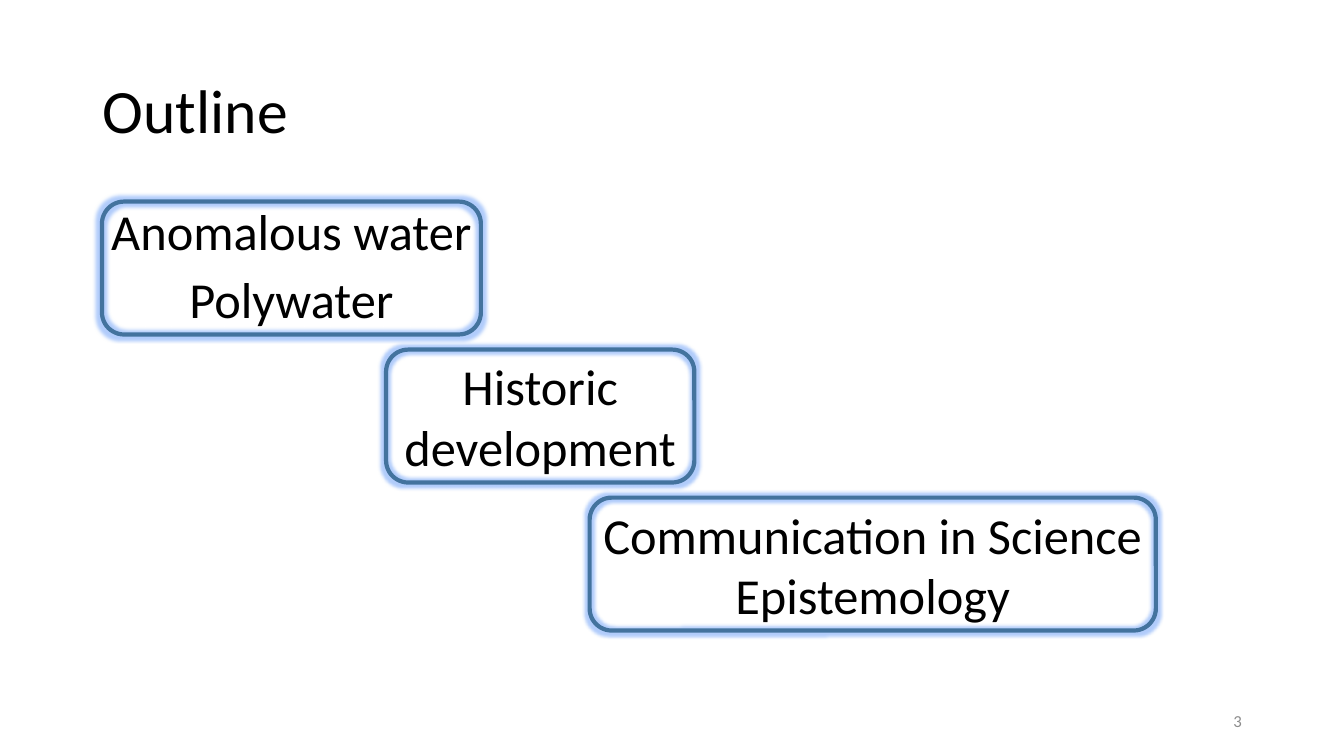
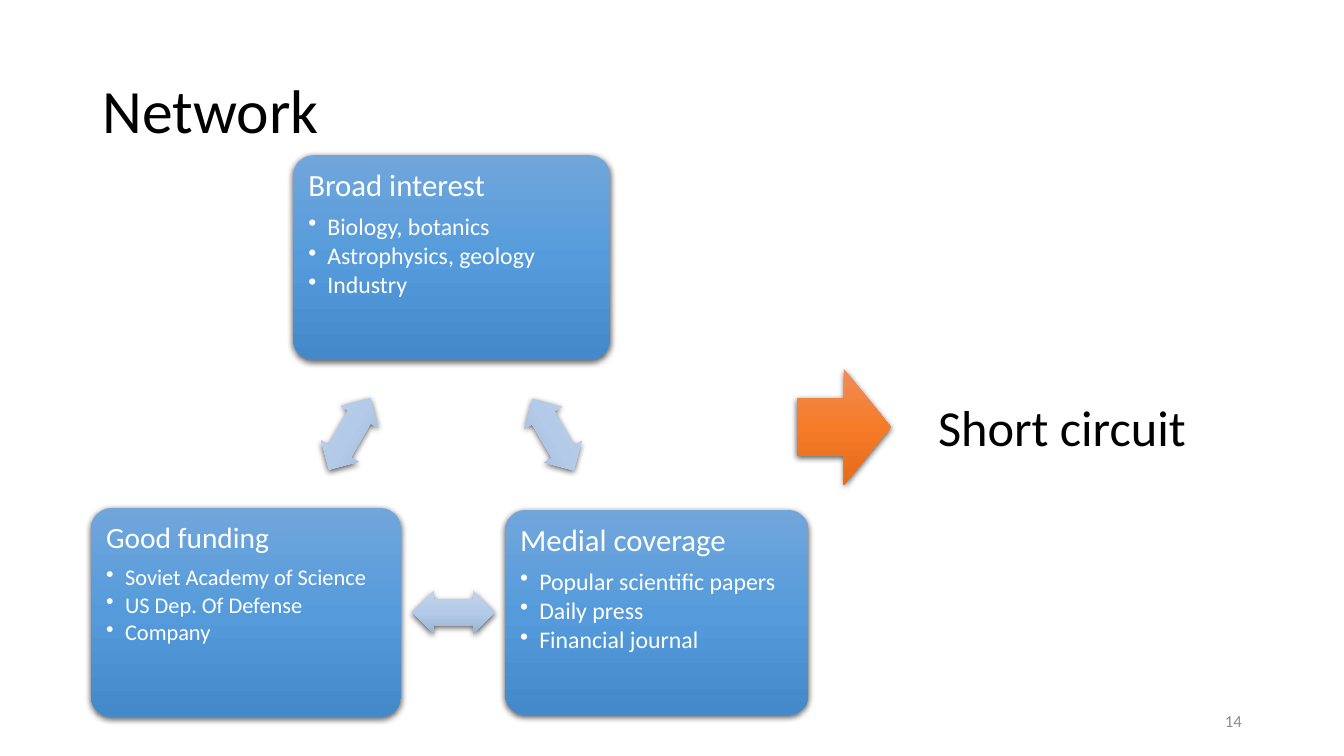
"""Build the outline and network slides of the polywater talk."""
from copy import deepcopy
from dataclasses import dataclass

from lxml import etree
from pptx import Presentation
from pptx.dml.color import RGBColor
from pptx.enum.shapes import MSO_SHAPE
from pptx.enum.text import MSO_ANCHOR, PP_ALIGN
from pptx.oxml.ns import qn
from pptx.util import Cm, Pt

ROUNDED = MSO_SHAPE.ROUNDED_RECTANGLE
DOUBLE_ARROW = MSO_SHAPE.LEFT_RIGHT_ARROW
RIGHT_ARROW = MSO_SHAPE.RIGHT_ARROW
LEFT, CENTER, RIGHT = PP_ALIGN.LEFT, PP_ALIGN.CENTER, PP_ALIGN.RIGHT
TOP, MIDDLE = MSO_ANCHOR.TOP, MSO_ANCHOR.MIDDLE

FONT = "Calibri"
BLACK, WHITE, GREY = "000000", "FFFFFF", "8C8C8C"
FRAME, GLOW = "43739E", "3C80F5"
BLUES = ("71A6DB", "559BDB", "448ACA")
PALE_BLUES = ("C0D2EB", "B3CBE9", "9BB4D3")
ORANGES = ("F18C57", "F67B28", "E56C19")
STEP_TOP, STEP_PITCH, STEP_HEIGHT = 5.08, 3.73, 3.35
ARROW_WIDTH, ARROW_HEIGHT = 2.08, 1.09


@dataclass(frozen=True)
class Area:
    """A rectangle in centimetres."""
    left: float
    top: float
    width: float
    height: float

    def lengths(self) -> tuple:
        return Cm(self.left), Cm(self.top), Cm(self.width), Cm(self.height)


@dataclass(frozen=True)
class Step:
    """A framed entry of the outline staircase."""
    left: float
    width: float
    lines: tuple
    spacing: float = 1.0
    gap: float = 0


@dataclass(frozen=True)
class Card:
    """A network card with a heading and bullets."""
    area: Area
    heading: str
    bullets: tuple
    heading_size: int = 22
    bullet_size: int = 17


@dataclass(frozen=True)
class Link:
    """A double arrow between two cards."""
    left: float
    top: float
    rotation: float


STEPS = (
    Step(2.57, 9.55, ("Anomalous water", "Polywater"), 0.9, 10),
    Step(9.73, 7.77, ("Historic development",)),
    Step(14.86, 14.27, ("Communication in Science", "Epistemology")),
)
CARDS = (
    Card(Area(7.39, 3.91, 7.98, 5.16), "Broad interest",
         ("Biology, botanics", "Astrophysics, geology", "Industry")),
    Card(Area(12.73, 12.85, 7.65, 5.16), "Medial coverage",
         ("Popular scientific papers", "Daily press", "Financial journal")),
    Card(Area(2.29, 12.8, 7.82, 5.26), "Good funding",
         ("Soviet Academy of Science", "US Dep. Of Defense", "Company"), 21, 16),
)
LINKS = (Link(12.9, 10.41, 60), Link(10.39, 14.88, 0), Link(7.77, 10.39, 300))


def colour(value: str) -> RGBColor:
    """Turn a hex string into a colour."""
    return RGBColor.from_string(value)


def format_text(para, size: float, ink: str, align=LEFT, spacing: float = 1.0) -> None:
    """Format a paragraph and its runs."""
    para.alignment = align
    para.line_spacing = spacing
    for span in para.runs:
        span.font.name = FONT
        span.font.size = Pt(size)
        span.font.color.rgb = colour(ink)


def add_label(page, area: Area, text: str, size: float, ink: str = BLACK,
              align=LEFT, anchor=MIDDLE, spacing: float = 1.0, wrap: bool = True) -> None:
    """Add a one-paragraph text box."""
    frame = page.shapes.add_textbox(*area.lengths()).text_frame
    frame.word_wrap = wrap
    frame.vertical_anchor = anchor
    frame.text = text
    format_text(frame.paragraphs[0], size, ink, align, spacing)


def add_effect(shape, tag: str, ink: str, alpha: int, **settings: str) -> None:
    """Give a shape a single glow or shadow."""
    shape.shadow.inherit = False
    effects = shape.element.spPr.find(qn("a:effectLst"))
    effect = etree.SubElement(effects, qn(tag), settings)
    shade = etree.SubElement(effect, qn("a:srgbClr"), val=ink)
    etree.SubElement(shade, qn("a:alpha"), val=str(alpha * 1000))


def add_gradient_shape(page, kind, area: Area, colours: tuple):
    """Add a borderless shape with a vertical gradient and a soft shadow."""
    shape = page.shapes.add_shape(kind, *area.lengths())
    shape.line.fill.background()
    shape.fill.gradient()
    shape.fill.gradient_angle = 270
    stops = shape.element.spPr.find(".//" + qn("a:gsLst"))
    stops.append(deepcopy(stops[0]))
    for index, (stop, value) in enumerate(zip(shape.fill.gradient_stops, colours)):
        stop.position = index / 2
        stop.color.rgb = colour(value)
    add_effect(shape, "a:outerShdw", BLACK, 63, blurRad=str(Pt(4.5)),
               dist=str(Pt(1.5)), dir="5400000", rotWithShape="0")
    return shape


def set_insets(frame, inset: float) -> None:
    """Set all four margins of a text frame."""
    frame.margin_left = frame.margin_right = Cm(inset)
    frame.margin_top = frame.margin_bottom = Cm(inset)
    frame.word_wrap = True


def add_step(page, step: Step, top: float) -> None:
    """Add a glowing frame with its centred lines."""
    area = Area(step.left, top, step.width, STEP_HEIGHT)
    box = page.shapes.add_shape(ROUNDED, *area.lengths())
    box.fill.background()
    box.line.color.rgb = colour(FRAME)
    box.line.width = Pt(3)
    add_effect(box, "a:glow", GLOW, 40, rad=str(Pt(5)))
    frame = box.text_frame
    set_insets(frame, 0)
    frame.vertical_anchor = MIDDLE
    frame.text = "\n".join(step.lines)
    for index, para in enumerate(frame.paragraphs):
        format_text(para, 36, BLACK, CENTER, step.spacing)
        para.space_before = Pt(step.gap if index else 0)


def add_bullet(para) -> None:
    """Give a paragraph a hanging bullet."""
    properties = para._p.get_or_add_pPr()
    properties.set("marL", str(Cm(0.48)))
    properties.set("indent", str(Cm(-0.48)))
    etree.SubElement(properties, qn("a:buChar"), char="•")


def add_card(page, card: Card) -> None:
    """Add a network card."""
    box = add_gradient_shape(page, ROUNDED, card.area, BLUES)
    box.adjustments[0] = 0.1
    frame = box.text_frame
    set_insets(frame, 0.23)
    frame.vertical_anchor = TOP
    frame.text = "\n".join((card.heading, *card.bullets))
    heading, *bullets = frame.paragraphs
    format_text(heading, card.heading_size, WHITE, spacing=0.9)
    heading.space_after = Pt(8)
    for para in bullets:
        add_bullet(para)
        format_text(para, card.bullet_size, WHITE, spacing=0.9)
        para.space_after = Pt(2.5)


def add_link(page, link: Link) -> None:
    """Add a double arrow."""
    area = Area(link.left, link.top, ARROW_WIDTH, ARROW_HEIGHT)
    arrow = add_gradient_shape(page, DOUBLE_ARROW, area, PALE_BLUES)
    arrow.adjustments[0] = 0.6
    arrow.adjustments[1] = 0.5
    arrow.rotation = link.rotation


def add_page(deck, title: str, number: int):
    """Add a blank page with its title and page number."""
    page = deck.slides.add_slide(deck.slide_layouts[6])
    add_label(page, Area(2.34, 1.02, 29.21, 3.68), title, 44, spacing=0.9)
    add_label(page, Area(23.93, 17.65, 7.62, 1.02), str(number), 12, GREY, RIGHT)
    return page


def build_outline(deck) -> None:
    """Build the outline page."""
    page = add_page(deck, "Outline", 3)
    for index, step in enumerate(STEPS):
        add_step(page, step, STEP_TOP + index * STEP_PITCH)


def build_network(deck) -> None:
    """Build the network page."""
    page = add_page(deck, "Network", 14)
    for card in CARDS:
        add_card(page, card)
    for link in LINKS:
        add_link(page, link)
    add_gradient_shape(page, RIGHT_ARROW, Area(20.09, 9.3, 2.36, 2.92), ORANGES)
    add_label(page, Area(23.39, 9.86, 6.81, 1.8), "Short circuit", 36,
              anchor=TOP, wrap=False)


def main() -> None:
    """Build and save the deck."""
    deck = Presentation()
    deck.slide_width, deck.slide_height = Cm(33.87), Cm(19.05)
    build_outline(deck)
    build_network(deck)
    deck.save("out.pptx")


if __name__ == "__main__":
    main()
